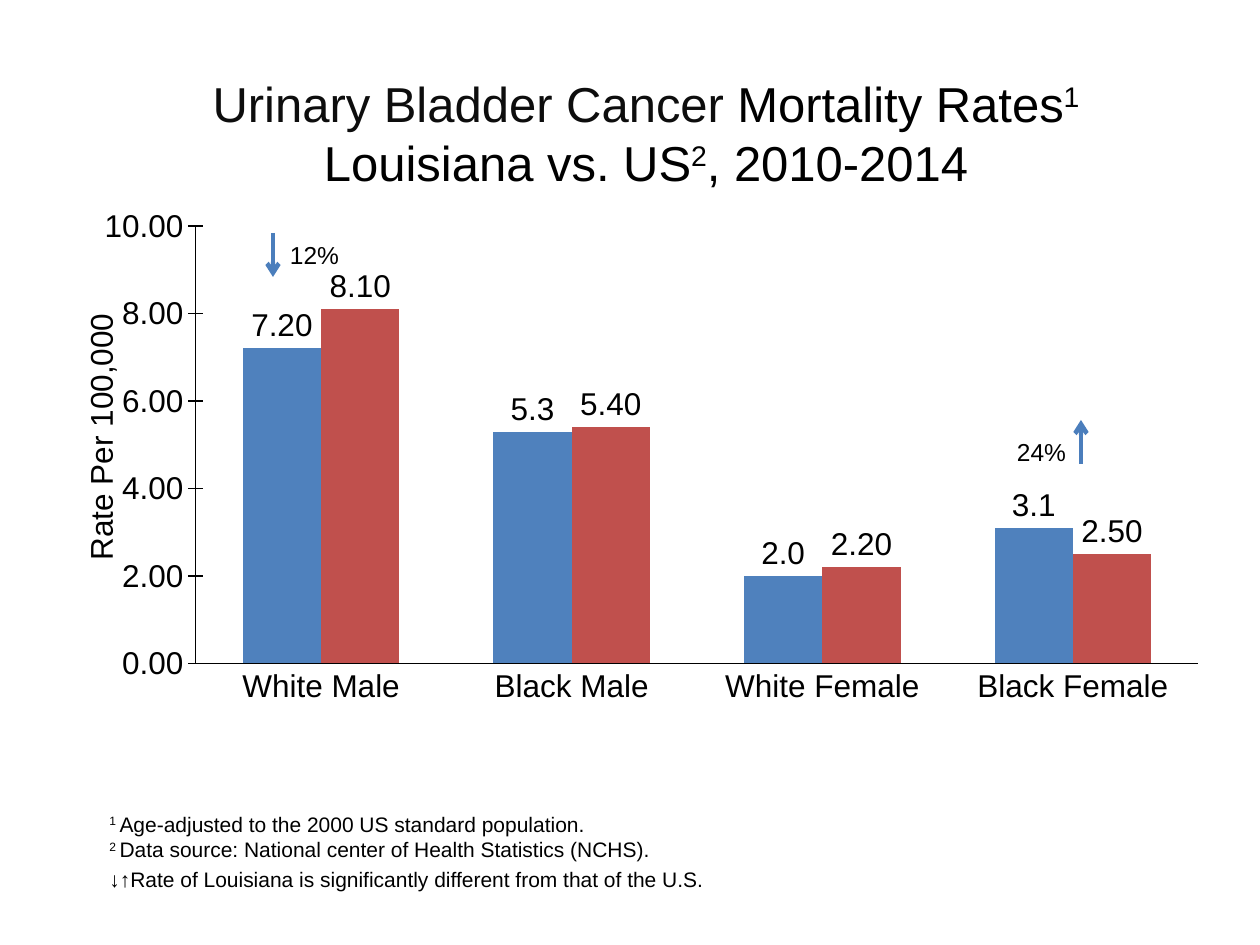
from lxml.etree import SubElement
from pptx import Presentation
from pptx.chart.data import CategoryChartData
from pptx.dml.color import RGBColor
from pptx.enum.chart import XL_CHART_TYPE, XL_LABEL_POSITION, XL_TICK_MARK
from pptx.enum.shapes import MSO_CONNECTOR
from pptx.enum.text import MSO_ANCHOR, PP_ALIGN
from pptx.oxml import parse_xml
from pptx.oxml.ns import nsdecls, qn
from pptx.util import Emu, Pt

BLACK, ARROW_BLUE = "000000", "4B7EBC"
SUPER = True
TITLE = [
    [("Urinary Bladder Cancer ", "0D0D0D"), ("Mortality Rates", BLACK), ("1", BLACK, SUPER)],
    [("Louisiana vs. US", BLACK), ("2", BLACK, SUPER), (", 2010-2014", BLACK)],
]
FOOTNOTES = [
    [("1 ", BLACK, SUPER), ("Age-adjusted to the 2000 US standard population.", BLACK)],
    [("2 ", BLACK, SUPER), ("Data source: National center of Health Statistics (NCHS).", BLACK)],
    [("↓↑Rate of Louisiana is significantly different from that of the U.S.", BLACK)],
]
GROUPS = ["White Male", "Black Male", "White Female", "Black Female"]
RATES = [
    ("Series 1", "4F81BD", [7.2, 5.3, 2, 3.1], {1: "5.3", 2: "2.0", 3: "3.1"}),
    ("Series 2", "C0504D", [8.1, 5.4, 2.2, 2.5], {}),
]
DIFFERENCES = [  # label, label left, label top, arrow x, arrow start, arrow end
    ("12%", 262, 234, 273, 233, 277),
    ("24%", 989, 431, 1081, 464, 420),
]


def px(length):
    """Turn slide pixels into EMU."""
    return Emu(round(length * 914400 / 126))


def color(hex_code):
    """Turn a hex string into a colour."""
    return RGBColor.from_string(hex_code)


def style(font, size, hex_code=BLACK):
    """Apply the slide typeface to a font."""
    font.name, font.size, font.bold = "Arial", Pt(size), False
    font.color.rgb = color(hex_code)


def add_run(paragraph, size, text, hex_code=BLACK, raised=False):
    """Add one run, raised for a footnote mark."""
    run = paragraph.add_run()
    run.text = text
    style(run.font, size, hex_code)
    if raised:
        run.font._element.set("baseline", "30000")


def add_text(slide, box, paragraphs, size, align=PP_ALIGN.LEFT, anchor=MSO_ANCHOR.TOP):
    """Add a text box of paragraphs made of runs."""
    frame = slide.shapes.add_textbox(*map(px, box)).text_frame
    frame.word_wrap, frame.vertical_anchor = True, anchor
    for index, runs in enumerate(paragraphs):
        paragraph = frame.add_paragraph() if index else frame.paragraphs[0]
        paragraph.alignment = align
        for run in runs:
            add_run(paragraph, size, *run)
    return frame


def place(parent, index, **fractions):
    """Give a chart part a manual layout."""
    for layout in parent.findall(qn("c:layout")):
        parent.remove(layout)
    layout = parse_xml(f"<c:layout {nsdecls('c')}><c:manualLayout/></c:layout>")
    for tag, value in fractions.items():
        SubElement(layout[0], qn(f"c:{tag}"), val=str(value))
    parent.insert(index, layout)


def style_axis(axis, tick):
    """Set the line, ticks and font of an axis."""
    axis.has_major_gridlines = False
    axis.major_tick_mark, axis.minor_tick_mark = tick, XL_TICK_MARK.NONE
    axis.format.line.color.rgb = color(BLACK)
    axis.format.line.width = Pt(0.75)
    style(axis.tick_labels.font, 18)


def add_rates(slide):
    """Add the clustered column chart of rates."""
    data = CategoryChartData(number_format="0.00")
    data.categories = GROUPS
    for name, _, values, _ in RATES:
        data.add_series(name, values)
    chart = slide.shapes.add_chart(
        XL_CHART_TYPE.COLUMN_CLUSTERED, *map(px, (63, 189, 1155, 661)), data).chart
    chart.has_title = chart.has_legend = False
    style(chart.font, 18)
    style_axis(chart.category_axis, XL_TICK_MARK.NONE)
    rate_axis = chart.value_axis
    style_axis(rate_axis, XL_TICK_MARK.CROSS)
    rate_axis.minimum_scale, rate_axis.maximum_scale, rate_axis.major_unit = 0, 10, 2
    rate_axis.tick_labels.number_format = "0.00"
    rate_axis.tick_labels.number_format_is_linked = False

    axis_title = rate_axis.axis_title
    add_run(axis_title.text_frame.paragraphs[0], 18, "Rate Per 100,000")
    body = axis_title.text_frame._txBody.find(qn("a:bodyPr"))
    body.set("rot", "-5400000")
    body.set("vert", "horz")
    place(axis_title._element, 1, xMode="edge", yMode="edge", x=0.01, y=0.18)
    plot_area = chart._chartSpace.chart.plotArea
    place(plot_area, 0, layoutTarget="inner", xMode="edge", yMode="edge",
          x=0.115, y=0.056, w=0.868, h=0.662)

    plot = chart.plots[0]
    plot.gap_width, plot.overlap, plot.vary_by_categories = 120, 0, False
    for series, (_, fill, _, short_labels) in zip(plot.series, RATES):
        series.format.fill.solid()
        series.format.fill.fore_color.rgb = color(fill)
        labels = series.data_labels
        labels.show_value, labels.position = True, XL_LABEL_POSITION.OUTSIDE_END
        labels.number_format, labels.number_format_is_linked = "0.00", False
        style(labels.font, 18)
        for index, text in short_labels.items():
            label = series.points[index].data_label
            add_run(label.text_frame.paragraphs[0], 18, text)
            label.position = XL_LABEL_POSITION.OUTSIDE_END


def add_arrow(slide, x, start, end):
    """Add a vertical arrow from start to end."""
    arrow = slide.shapes.add_connector(
        MSO_CONNECTOR.STRAIGHT, px(x), px(start), px(x), px(end))
    arrow.line.color.rgb, arrow.line.width = color(ARROW_BLUE), Pt(2.5)
    SubElement(arrow.line._get_or_add_ln(), qn("a:tailEnd"), type="arrow")
    SubElement(arrow._element.spPr, qn("a:effectLst"))


def main():
    """Build the slide and save it."""
    deck = Presentation()
    deck.slide_width, deck.slide_height = px(1260), px(945)
    slide = deck.slides.add_slide(deck.slide_layouts[6])
    add_rates(slide)
    add_text(slide, (126, 53, 1040, 158), TITLE, 28, PP_ALIGN.CENTER, MSO_ANCHOR.MIDDLE)
    notes = add_text(slide, (97, 805, 893, 95), FOOTNOTES, 12)
    notes.paragraphs[-1].line_spacing = 1.2
    for text, left, top, x, start, end in DIFFERENCES:
        add_arrow(slide, x, start, end)
        add_text(slide, (left, top, 105, 47), [[(text,)]], 14, PP_ALIGN.CENTER)
    deck.save("out.pptx")


if __name__ == "__main__":
    main()
